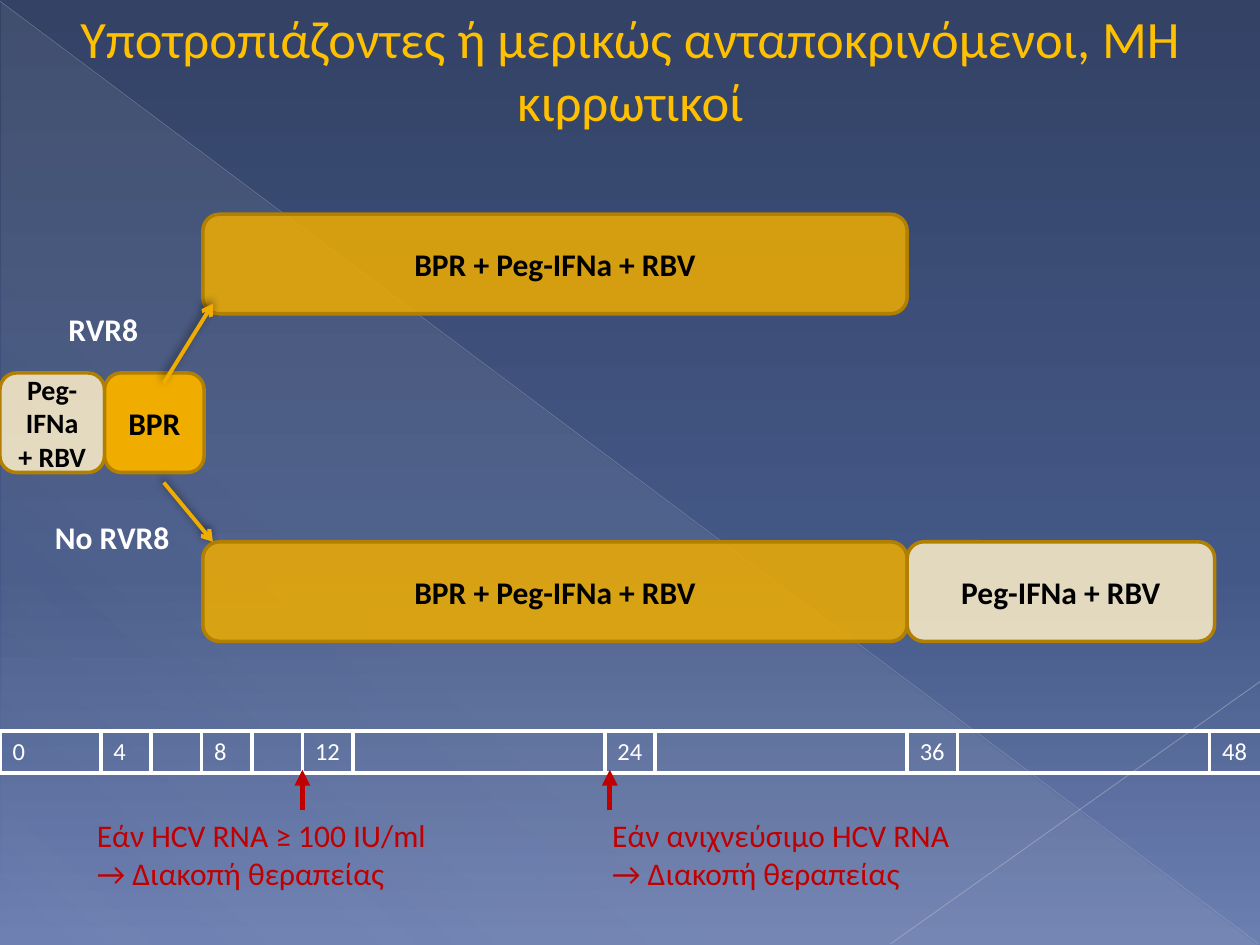
from lxml.etree import SubElement
from pptx import Presentation
from pptx.dml.color import RGBColor
from pptx.enum.shapes import MSO_CONNECTOR, MSO_SHAPE
from pptx.enum.text import MSO_ANCHOR, PP_ALIGN
from pptx.oxml import parse_xml
from pptx.oxml.ns import nsdecls, qn
from pptx.util import Inches, Pt

COLORS = {
    "navy": "334265", "blue": "445887", "sky": "6C7FB1", "mist": "D4D4D6",
    "rule": "B9BDC8", "rule2": "C1C4CE", "title": "FFC000", "white": "FFFFFF",
    "black": "000000", "cream": "FFF0C9", "amber": "F0AD00", "brown": "B28000",
    "red": "C00000",
}
FONT = "Calibri"
NO_STYLE = "{2D5ABB26-0587-4C30-8999-92F81FD0307C}"


def rgb(name):
    return RGBColor.from_string(COLORS[name])


def set_alpha(root, percent):
    for clr in root.iter(qn("a:srgbClr")):
        SubElement(clr, qn("a:alpha"), val=str(percent * 1000))


class SlideBuilder:
    def __init__(self, s):
        self.s = s

    def gradient(self, fill, root, stops, angle):
        fill.gradient()
        grad = root.find(".//" + qn("a:gradFill"))
        gs_lst = grad.find(qn("a:gsLst"))
        for gs in list(gs_lst):
            gs_lst.remove(gs)
        for pos, color, alpha in stops:
            gs = SubElement(gs_lst, qn("a:gs"), pos=str(pos * 1000))
            SubElement(gs, qn("a:srgbClr"), val=COLORS[color])
            if alpha < 100:
                set_alpha(gs, alpha)
        grad.find(qn("a:lin")).set("ang", str(angle * 60000))

    def background(self, stops, angle):
        self.gradient(self.s.background.fill, self.s._element, stops, angle)

    def triangle(self, x, y, w, h, stops, angle):
        sp = self.s.shapes.add_shape(
            MSO_SHAPE.RIGHT_TRIANGLE, Inches(x), Inches(y), Inches(w), Inches(h))
        sp.shadow.inherit = False
        sp.line.fill.background()
        self.gradient(sp.fill, sp._element, stops, angle)

    def add_text(self, tf, text, size, color, bold=False, align=None):
        tf.word_wrap = True
        p = tf.paragraphs[0]
        p.alignment = align
        r = p.add_run()
        r.text = text
        r.font.name = FONT
        r.font.size = Pt(size)
        r.font.bold = bold
        r.font.color.rgb = rgb(color)

    def label(self, x, y, w, h, text, size, color, bold=False, align=None):
        tb = self.s.shapes.add_textbox(Inches(x), Inches(y), Inches(w), Inches(h))
        self.add_text(tb.text_frame, text, size, color, bold, align)

    def box(self, x, y, w, text, color, alpha=100, size=18):
        sp = self.s.shapes.add_shape(
            MSO_SHAPE.ROUNDED_RECTANGLE, Inches(x), Inches(y), Inches(w), Inches(0.79))
        sp.shadow.inherit = False
        sp.fill.solid()
        sp.fill.fore_color.rgb = rgb(color)
        if alpha < 100:
            set_alpha(sp._element.spPr.find(qn("a:solidFill")), alpha)
        sp.line.color.rgb = rgb("brown")
        sp.line.width = Pt(2)
        sp.text_frame.vertical_anchor = MSO_ANCHOR.MIDDLE
        self.add_text(sp.text_frame, text, size, "black", True, PP_ALIGN.CENTER)

    def line(self, start, end, color, width, alpha=100, arrow=None, shadow=False):
        points = [Inches(v) for v in (*start, *end)]
        cx = self.s.shapes.add_connector(MSO_CONNECTOR.STRAIGHT, *points)
        cx.line.color.rgb = rgb(color)
        cx.line.width = Pt(width)
        ln = cx._element.spPr.find(qn("a:ln"))
        if alpha < 100:
            set_alpha(ln, alpha)
        if arrow:
            SubElement(ln, qn("a:tailEnd"), type=arrow)
        effects = SubElement(cx._element.spPr, qn("a:effectLst"))
        if shadow:
            sh = SubElement(effects, qn("a:outerShdw"), blurRad=str(Pt(5)),
                            dist=str(Pt(2)), dir=str(245 * 60000), rotWithShape="0")
            SubElement(sh, qn("a:srgbClr"), val=COLORS["black"])
            set_alpha(sh, 50)

    def border(self, cell, sides):
        tc_pr = cell._tc.get_or_add_tcPr()
        for i, side in enumerate(sides):
            tc_pr.insert(i, parse_xml(
                f'<a:ln{side} {nsdecls("a")} w="{Pt(2.25)}"><a:solidFill>'
                f'<a:srgbClr val="{COLORS["white"]}"/></a:solidFill></a:ln{side}>'))

    def timeline(self, x, y, w, weeks, step):
        count = weeks[-1] // step + 1
        starts = {week // step: str(week) for week in weeks}
        frame = self.s.shapes.add_table(
            1, count, Inches(x), Inches(y), Inches(w), Inches(0.33))
        table = frame.table
        table.first_row = table.horz_banding = False
        table._tbl.tblPr.find(qn("a:tableStyleId")).text = NO_STYLE
        for i in range(count):
            table.columns[i].width = Inches(w / count)
            cell = table.cell(0, i)
            cell.fill.background()
            cell.margin_right = 0
            if i in starts:
                self.add_text(cell.text_frame, starts[i], 14, "white")
            else:
                p = cell.text_frame.paragraphs[0]
                SubElement(p._p, qn("a:endParaRPr"), sz="1400")
            left = ["L"] if i in starts else []
            right = ["R"] if i + 1 in starts else []
            self.border(cell, left + right + ["T", "B"])


def main():
    prs = Presentation()
    prs.slide_width, prs.slide_height = Inches(10), Inches(7.5)
    b = SlideBuilder(prs.slides.add_slide(prs.slide_layouts[6]))

    b.background([(0, "navy", 100), (60, "blue", 100), (100, "sky", 100)], 90)
    b.triangle(0.01, 0.02, 9.98, 7.48,
               [(0, "mist", 10), (70, "mist", 8), (100, "mist", 1)], 133)
    b.line((0, 0.01), (9.99, 7.49), "rule", 0.39, 35)
    b.line((10, 5.41), (7.07, 7.49), "rule2", 0.47, 45)

    b.label(0.2, 0, 9.61, 1.11,
            "Υποτροπιάζοντες ή μερικώς ανταποκρινόμενοι, ΜΗ κιρρωτικοί",
            30, "title", align=PP_ALIGN.CENTER)
    b.timeline(0, 5.8, 10, [0, 4, 8, 12, 24, 36, 48], 2)

    dual = "Peg-IFNa + RBV"
    triple = "BPR + " + dual
    b.box(0, 2.96, 0.83, dual, "cream", 85, 16)
    b.box(0.83, 2.96, 0.79, "BPR", "amber")
    for y in (4.3, 1.7):
        b.box(1.61, y, 5.59, triple, "amber", 85)
    b.box(7.2, 4.3, 2.44, dual, "cream", 85)

    for y1, y2 in ((3.04, 2.41), (3.83, 4.3)):
        b.line((1.3, y1), (1.69, y2), "amber", 2.25, arrow="arrow", shadow=True)
    for x, y, w, name in ((0.35, 2.41, 0.94, "RVR8"), (0.2, 4.06, 1.38, "No RVR8")):
        b.label(x, y, w, 0.4, name, 18, "white", True, PP_ALIGN.CENTER)

    for arrow_x, text_x, rule in ((4.84, 4.76, "Εάν ανιχνεύσιμο HCV RNA"),
                                  (2.4, 0.67, "Εάν HCV RNA ≥ 100 IU/ml")):
        b.line((arrow_x, 6.43), (arrow_x, 6.11), "red", 3, arrow="triangle")
        b.label(text_x, 6.43, 2.99, 0.71, rule + " → Διακοπή θεραπείας", 18, "red")

    prs.save("out.pptx")


if __name__ == "__main__":
    main()
